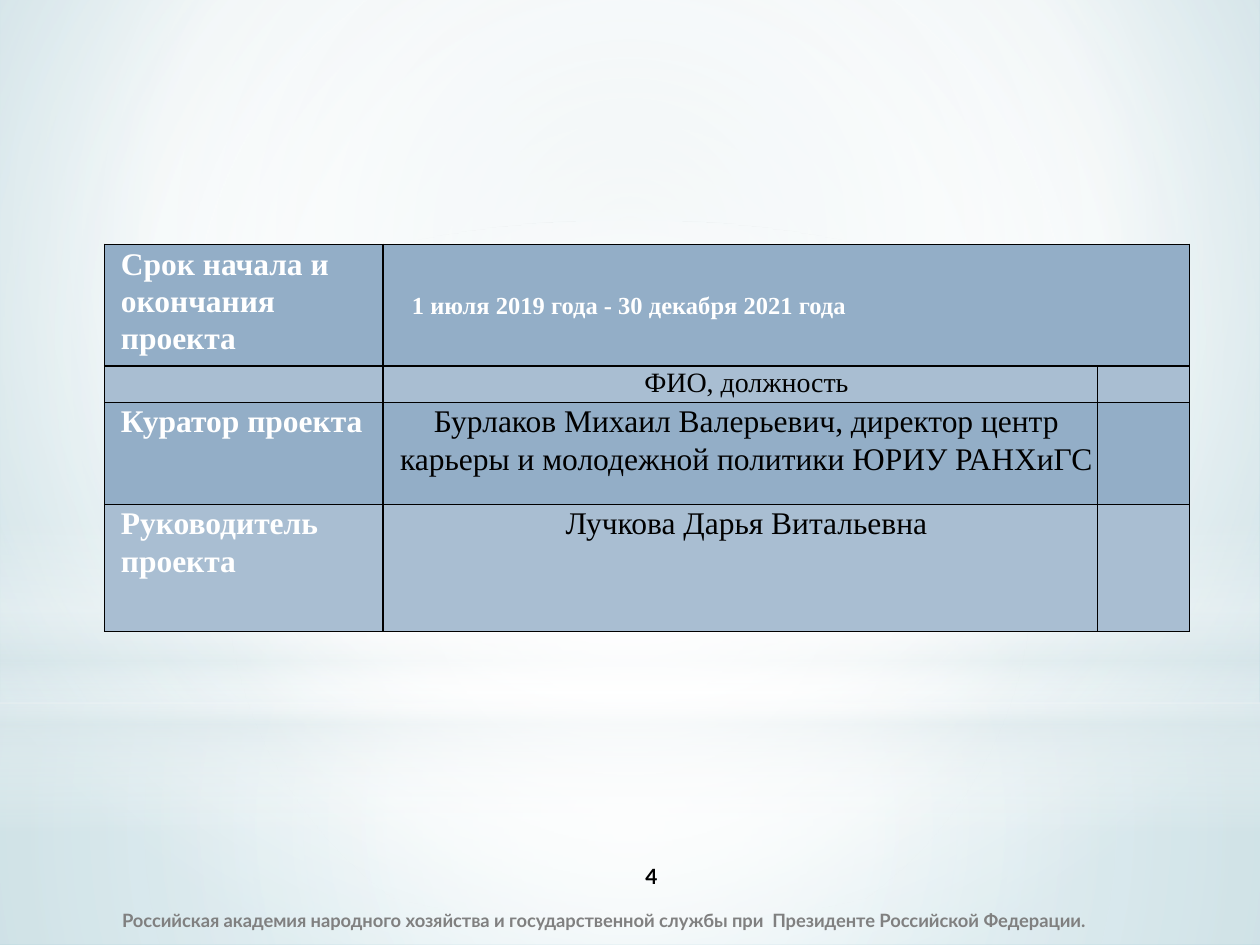
"""Build a project summary slide with a term and staff table."""
import pptx
import pptx.dml.color
import pptx.enum.shapes
import pptx.enum.text
import pptx.oxml.ns
import pptx.util
from lxml import etree

Inches = pptx.util.Inches
RGBColor = pptx.dml.color.RGBColor
ALIGN = pptx.enum.text.PP_ALIGN
ANCHOR = pptx.enum.text.MSO_ANCHOR
SHAPE = pptx.enum.shapes.MSO_SHAPE
qn = pptx.oxml.ns.qn

WHITE = RGBColor(0xFF, 0xFF, 0xFF)
BLACK = RGBColor(0, 0, 0)
GREY = RGBColor(0x80, 0x80, 0x80)
MIST = RGBColor(0xDD, 0xE9, 0xEC)
PALE = RGBColor(0xD0, 0xE2, 0xE6)
AQUA = RGBColor(0x9B, 0xC8, 0xD4)
DARK_ROW = RGBColor(0x93, 0xAE, 0xC7)
LIGHT_ROW = RGBColor(0xA9, 0xBE, 0xD2)

CENTRE = (50, 50, 50, 50)
COLUMNS = (2.21, 5.67, 0.73)
ROWS = (0.64, 0.29, 0.81, 1.01)
STAFF = (
    ("", "ФИО, должность", 16),
    ("Куратор проекта", "Бурлаков Михаил Валерьевич, директор центр карьеры "
     "и молодежной политики ЮРИУ РАНХиГС", 18),
    ("Руководитель проекта", "Лучкова Дарья Витальевна", 18),
)


def set_gradient(owner, fill, stops, focus=None):
    """Give a fill gradient stops, round a focus or from top to bottom."""
    fill.gradient()
    gradient = next(owner.iter(qn("a:gradFill")))
    for child in list(gradient):
        gradient.remove(child)
    stop_list = etree.SubElement(gradient, qn("a:gsLst"))
    for position, color, opacity in stops:
        stop = etree.SubElement(stop_list, qn("a:gs"), pos=str(position * 1000))
        tint = etree.SubElement(stop, qn("a:srgbClr"), val=str(color))
        if opacity < 100:
            etree.SubElement(tint, qn("a:alpha"), val=str(opacity * 1000))
    if focus:
        path = etree.SubElement(gradient, qn("a:path"), path="circle")
        edges = {side: str(share * 1000) for side, share in zip("ltrb", focus)}
        etree.SubElement(path, qn("a:fillToRect"), **edges)
    else:
        etree.SubElement(gradient, qn("a:lin"), ang="5400000", scaled="0")


def add_glow(page, kind, top, height, stops, focus=None):
    """Add a full-width translucent gradient shape."""
    glow = page.shapes.add_shape(kind, 0, Inches(top), Inches(10), Inches(height))
    glow.shadow.inherit = False
    glow.line.fill.background()
    set_gradient(glow._element, glow.fill, stops, focus)


def add_backdrop(page):
    """Paint the background and its layers of light."""
    background = page.background.fill
    set_gradient(page._element, background,
                 ((0, PALE, 100), (60, WHITE, 100), (100, AQUA, 100)),
                 (20, 10, 20, 60))
    add_glow(page, SHAPE.RECTANGLE, 5.58, 1.92,
             ((0, WHITE, 91), (37, WHITE, 76), (100, MIST, 79)), CENTRE)
    add_glow(page, SHAPE.RECTANGLE, 0, 5.58,
             ((0, WHITE, 89), (48, WHITE, 62), (100, MIST, 79)), CENTRE)
    add_glow(page, SHAPE.RECTANGLE, 4.12, 2.5,
             ((0, WHITE, 0), (29, WHITE, 30), (45, MIST, 40),
              (55, WHITE, 26), (65, MIST, 60), (100, WHITE, 0)))
    add_glow(page, SHAPE.OVAL, 1.75, 5.58,
             ((0, WHITE, 100), (56, WHITE, 0)), CENTRE)


def style_font(para, name, size, color, bold):
    """Set the font of a paragraph."""
    font = para.font
    font.name, font.size, font.bold = name, pptx.util.Pt(size), bold
    font.color.rgb = color


def add_label(page, left, top, width, text, size, color, align):
    """Add a bold one-line text box."""
    box = page.shapes.add_textbox(Inches(left), Inches(top), Inches(width), Inches(0.4))
    frame = box.text_frame
    frame.word_wrap = True
    frame.vertical_anchor = ANCHOR.MIDDLE
    para = frame.paragraphs[0]
    para.text = text
    para.alignment = align
    style_font(para, "Lato", size, color, True)


def style_cell(cell, color):
    """Set the fill, margins and black borders of a cell."""
    cell.fill.solid()
    cell.fill.fore_color.rgb = color
    cell.margin_left = cell.margin_right = Inches(0.03)
    cell.margin_top = cell.margin_bottom = 0
    properties = cell._tc.get_or_add_tcPr()
    for index, side in enumerate(("a:lnL", "a:lnR", "a:lnT", "a:lnB")):
        line = etree.Element(qn(side), w=str(pptx.util.Pt(1)))
        solid = etree.SubElement(line, qn("a:solidFill"))
        etree.SubElement(solid, qn("a:srgbClr"), val=str(BLACK))
        properties.insert(index, line)


def write_cell(cell, text, size, color, bold, align=ALIGN.LEFT, indent=0.1):
    """Write indented text in a cell, or keep an empty cell low."""
    para = cell.text_frame.paragraphs[0]
    if not text:
        etree.SubElement(para._p, qn("a:endParaRPr"), sz="1000")
        return
    para.text = text
    para.alignment = align
    para.line_spacing = 1.07
    para._p.get_or_add_pPr().set("marL", str(Inches(indent)))
    style_font(para, "Times New Roman", size, color, bold)


def add_project_table(page):
    """Add the table with the project term and staff."""
    frame = page.shapes.add_table(len(ROWS), len(COLUMNS), Inches(0.83), Inches(1.94),
                                  Inches(sum(COLUMNS)), Inches(sum(ROWS)))
    table = frame.table
    table.first_row = table.horz_banding = False
    for column, width in zip(table.columns, COLUMNS):
        column.width = Inches(width)
    for index, height in enumerate(ROWS):
        table.rows[index].height = Inches(height)
        for cell in table.rows[index].cells:
            style_cell(cell, LIGHT_ROW if index % 2 else DARK_ROW)

    term = table.cell(0, 1)
    term.merge(table.cell(0, 2))
    term.vertical_anchor = ANCHOR.MIDDLE
    write_cell(table.cell(0, 0), "Срок начала и окончания проекта", 18, WHITE, True)
    write_cell(term, "1 июля 2019 года - 30 декабря 2021 года", 14, WHITE, True,
               indent=0.2)
    for index, (role, person, size) in enumerate(STAFF, 1):
        write_cell(table.cell(index, 0), role, 18, WHITE, True)
        write_cell(table.cell(index, 1), person, size, BLACK, False, ALIGN.CENTER)
        write_cell(table.cell(index, 2), "", size, BLACK, False)


def main():
    """Build and save the deck."""
    deck = pptx.Presentation()
    deck.slide_width, deck.slide_height = Inches(10), Inches(7.5)
    page = deck.slides.add_slide(deck.slide_layouts[6])
    add_backdrop(page)
    add_label(page, 0.87, 7.1, 8.62,
              "Российская академия народного хозяйства и государственной службы "
              "при  Президенте Российской Федерации.", 10.5, GREY, ALIGN.LEFT)
    add_label(page, 4.17, 6.75, 2, "4", 12, BLACK, ALIGN.CENTER)
    add_project_table(page)
    deck.save("out.pptx")


if __name__ == "__main__":
    main()
